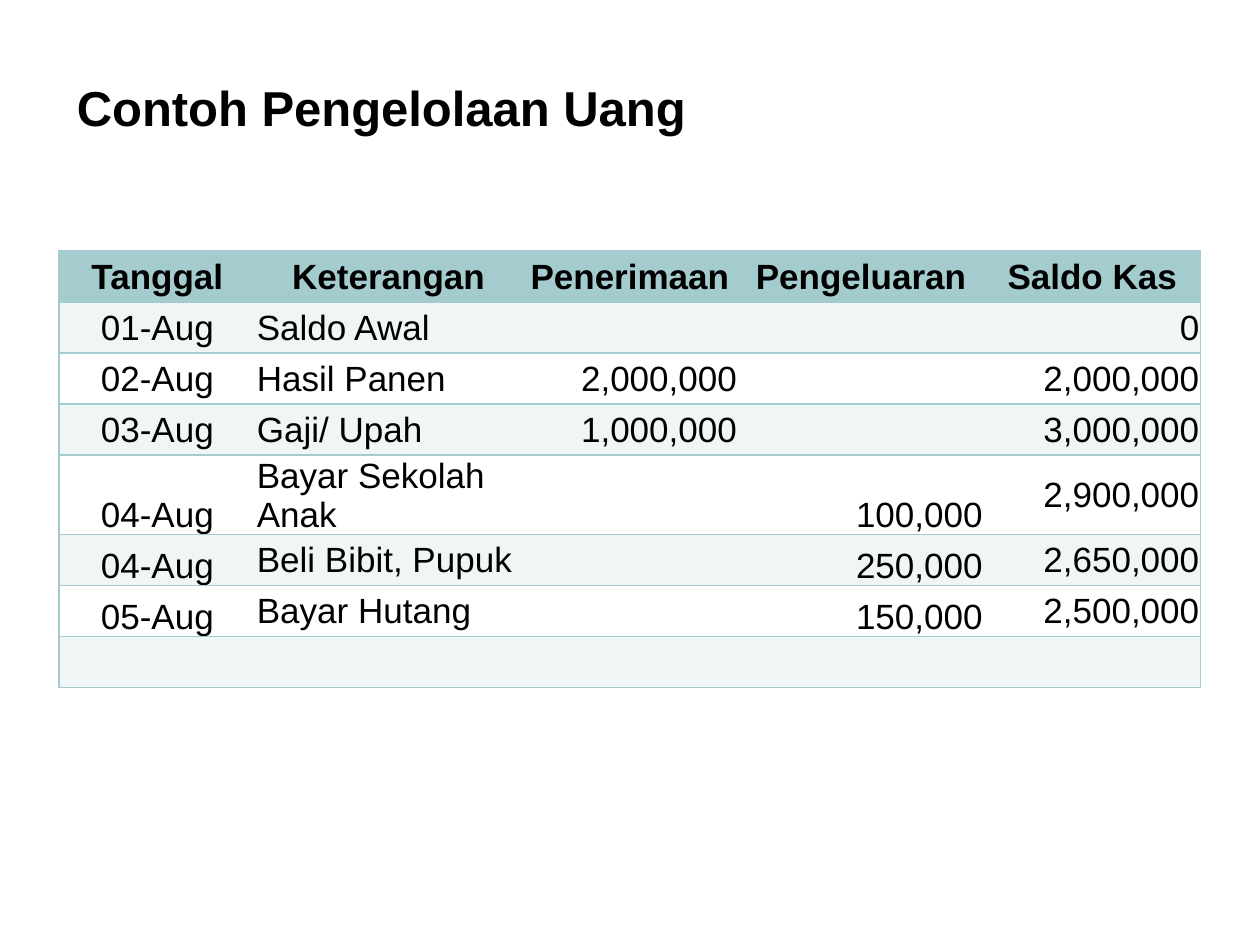
"""Build a slide with a household cash book table."""
from lxml.etree import SubElement
from pptx import Presentation
from pptx.dml.color import RGBColor
from pptx.enum.text import MSO_ANCHOR as Anchor, PP_ALIGN as Align
from pptx.oxml.ns import qn
from pptx.util import Pt

BLACK = RGBColor(0x00, 0x00, 0x00)
WHITE = RGBColor(0xFF, 0xFF, 0xFF)
TEAL = RGBColor(0xA4, 0xCB, 0xCE)
PALE = RGBColor(0xF0, 0xF6, 0xF6)

ENTRIES = [
    ("Tanggal", "Keterangan", "Penerimaan", "Pengeluaran", "Saldo Kas"),
    ("01-Aug", "Saldo Awal", "", "", "0"),
    ("02-Aug", "Hasil Panen", "2,000,000", "", "2,000,000"),
    ("03-Aug", "Gaji/ Upah", "1,000,000", "", "3,000,000"),
    ("04-Aug", "Bayar Sekolah Anak", "", "100,000", "2,900,000"),
    ("04-Aug", "Beli Bibit, Pupuk", "", "250,000", "2,650,000"),
    ("05-Aug", "Bayar Hutang", "", "150,000", "2,500,000"),
    ("", "", "", "", ""),
]
WIDTHS = [112.3, 152, 123.8, 140.4, 123.8]
ALIGNMENTS = [Align.CENTER, Align.LEFT, Align.RIGHT, Align.RIGHT, Align.RIGHT]
ROW_HEIGHT = 29.2
FIRST_BOTTOM_ROW = 4
BOTTOM_COLUMNS = (0, 3)


def write(frame, text, size=20, bold=False, align=Align.LEFT):
    paragraph = frame.paragraphs[0]
    paragraph.alignment = align
    font = paragraph.font
    if text:
        run = paragraph.add_run()
        run.text = text
        font = run.font
    font.name = "Arial"
    font.size = Pt(size)
    font.bold = bold
    font.color.rgb = BLACK


def draw_border(cell, side, visible):
    properties = cell._tc.get_or_add_tcPr()
    line = SubElement(properties, qn(f"a:ln{side}"), w=str(Pt(1)))
    if visible:
        fill = SubElement(line, qn("a:solidFill"))
        SubElement(fill, qn("a:srgbClr"), val=str(TEAL))
    else:
        SubElement(line, qn("a:noFill"))


prs = Presentation()
prs.slide_width, prs.slide_height = Pt(720), Pt(540)
slide = prs.slides.add_slide(prs.slide_layouts[5])

title = slide.shapes.title
title.left, title.top, title.width, title.height = Pt(36.7), Pt(18), Pt(652.3), Pt(63.4)
title.text_frame.vertical_anchor = Anchor.BOTTOM
write(title.text_frame, "Contoh Pengelolaan Uang", size=28, bold=True)

cash_book = slide.shapes.add_table(
    len(ENTRIES), len(WIDTHS), Pt(33.8), Pt(143.3),
    Pt(sum(WIDTHS)), Pt(ROW_HEIGHT * len(ENTRIES))).table
for column, width in zip(cash_book.columns, WIDTHS):
    column.width = Pt(width)

last_column = len(WIDTHS) - 1
for r, entry in enumerate(ENTRIES):
    cash_book.rows[r].height = Pt(ROW_HEIGHT)
    is_header = r == 0
    for c, text in enumerate(entry):
        cell = cash_book.cell(r, c)
        cell.margin_left = cell.margin_right = cell.margin_top = Pt(0.7)
        cell.margin_bottom = Pt(0)
        at_bottom = r >= FIRST_BOTTOM_ROW and c in BOTTOM_COLUMNS
        cell.vertical_anchor = Anchor.BOTTOM if at_bottom else Anchor.MIDDLE
        draw_border(cell, "L", c == 0)
        draw_border(cell, "R", c == last_column)
        draw_border(cell, "T", True)
        draw_border(cell, "B", True)
        cell.fill.solid()
        cell.fill.fore_color.rgb = TEAL if is_header else PALE if r % 2 else WHITE
        write(cell.text_frame, text, bold=is_header,
              align=Align.CENTER if is_header else ALIGNMENTS[c])

prs.save("out.pptx")
